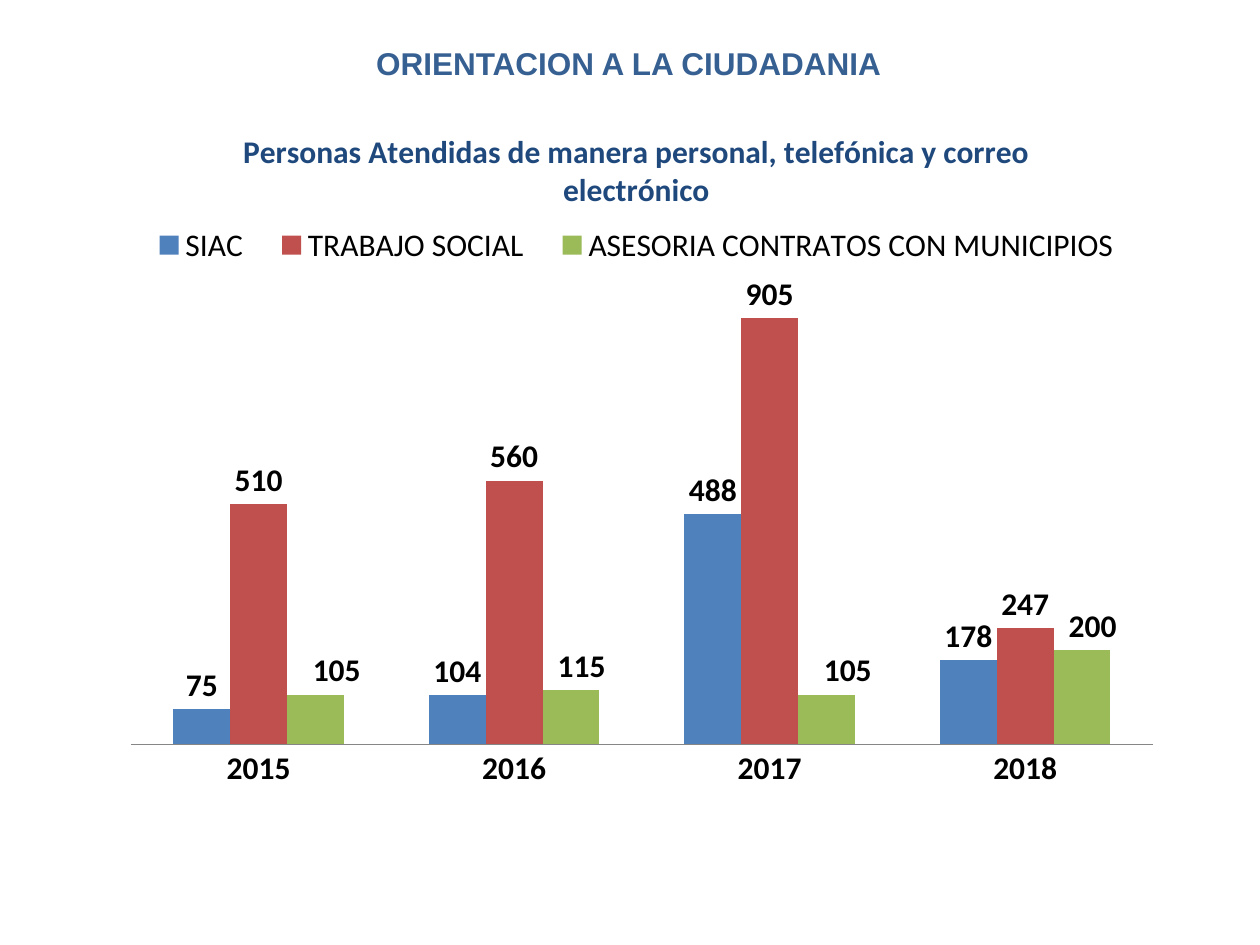
from dataclasses import dataclass

from lxml.etree import SubElement
from pptx import Presentation
from pptx.chart.data import CategoryChartData
from pptx.dml.color import RGBColor
from pptx.enum.chart import XL_CHART_TYPE, XL_LABEL_POSITION, XL_LEGEND_POSITION, XL_TICK_MARK
from pptx.enum.text import MSO_ANCHOR, PP_ALIGN
from pptx.oxml.ns import qn
from pptx.util import Inches, Pt


@dataclass(frozen=True)
class Theme:
    heading: RGBColor = RGBColor(0x37, 0x60, 0x92)
    chart_title: RGBColor = RGBColor(0x1F, 0x49, 0x7D)
    text: RGBColor = RGBColor(0, 0, 0)
    axis: RGBColor = RGBColor(0x86, 0x86, 0x86)
    series: tuple = (
        RGBColor(0x4F, 0x81, 0xBD),
        RGBColor(0xC0, 0x50, 0x4D),
        RGBColor(0x9B, 0xBB, 0x59),
    )
    heading_font: str = "Arial"
    chart_font: str = "Calibri"
    size: Pt = Pt(18)


THEME = Theme()
YEARS = ("2015", "2016", "2017", "2018")
ATTENDED = {
    "SIAC": (75, 104, 488, 178),
    "TRABAJO SOCIAL": (510, 560, 905, 247),
    "ASESORIA CONTRATOS CON MUNICIPIOS": (105, 115, 105, 200),
}
CONTRACT_LABEL_SHIFTS = (0.02, 0.01, 0.02, 0.01)


def format_font(font, color, bold=True, name=THEME.chart_font):
    font.name = name
    font.size = THEME.size
    font.bold = bold
    font.color.rgb = color


def add_manual_layout(parent, position, **settings):
    for old_layout in parent.findall(qn("c:layout")):
        parent.remove(old_layout)
    layout = SubElement(parent, qn("c:layout"))
    manual = SubElement(layout, qn("c:manualLayout"))
    for name, value in settings.items():
        SubElement(manual, qn(f"c:{name}")).set("val", str(value))
    parent.insert(position, layout)


def place_title(slide, left, top, width, height):
    title = slide.shapes.title
    title.left, title.top, title.width, title.height = left, top, width, height
    frame = title.text_frame
    frame.text = "ORIENTACION A LA CIUDADANIA"
    frame.vertical_anchor = MSO_ANCHOR.TOP
    paragraph = frame.paragraphs[0]
    paragraph.alignment = PP_ALIGN.CENTER
    format_font(paragraph.runs[0].font, THEME.heading, name=THEME.heading_font)


def format_chart_title(chart):
    chart.has_title = True
    frame = chart.chart_title.text_frame
    frame.text = "Personas Atendidas de manera personal, telefónica y correo electrónico"
    format_font(frame.paragraphs[0].runs[0].font, THEME.chart_title)
    add_manual_layout(
        chart.chart_title._element, 1, xMode="edge", yMode="edge", x=0.12, y=0.05
    )


def format_legend(chart):
    chart.has_legend = True
    legend = chart.legend
    legend.position = XL_LEGEND_POSITION.TOP
    legend.include_in_layout = False
    format_font(legend.font, THEME.text, bold=False)
    add_manual_layout(
        legend._element, 1, xMode="edge", yMode="edge", x=0.02, y=0.19, w=0.95, h=0.06
    )


def format_axes(chart):
    category_axis = chart.category_axis
    category_axis.major_tick_mark = XL_TICK_MARK.NONE
    category_axis.format.line.color.rgb = THEME.axis
    format_font(category_axis.tick_labels.font, THEME.text)
    value_axis = chart.value_axis
    value_axis.visible = False
    value_axis.has_major_gridlines = False
    value_axis.minimum_scale = 0
    value_axis.maximum_scale = 1000


def format_series(plot):
    for series, color in zip(plot.series, THEME.series):
        series.format.fill.solid()
        series.format.fill.fore_color.rgb = color
        labels = series.data_labels
        labels.show_value = True
        labels.position = XL_LABEL_POSITION.OUTSIDE_END
        format_font(labels.font, THEME.text)


def shift_labels(series, shifts):
    for index in range(len(shifts)):
        label = series.points[index].data_label
        label.position = XL_LABEL_POSITION.OUTSIDE_END
        format_font(label.font, THEME.text)
    labels = series.data_labels._element.findall(qn("c:dLbl"))
    for label, shift in zip(labels, shifts):
        add_manual_layout(label, 1, x=shift, y=0)


def place_chart(slide, left, top, width, height):
    data = CategoryChartData()
    data.categories = YEARS
    for name, values in ATTENDED.items():
        data.add_series(name, values)
    chart = slide.shapes.add_chart(
        XL_CHART_TYPE.COLUMN_CLUSTERED, left, top, width, height, data
    ).chart
    chart.font.name = THEME.chart_font
    format_chart_title(chart)
    format_legend(chart)
    format_axes(chart)
    plot = chart.plots[0]
    plot.gap_width = 150
    plot.overlap = 0
    plot.vary_by_categories = False
    format_series(plot)
    shift_labels(plot.series[-1], CONTRACT_LABEL_SHIFTS)
    plot_area = chart._chartSpace.find(f"{qn('c:chart')}/{qn('c:plotArea')}")
    add_manual_layout(
        plot_area, 0, layoutTarget="inner", xMode="edge", yMode="edge",
        x=0.02, y=0.26, w=0.96, h=0.66,
    )


def main():
    presentation = Presentation()
    presentation.slide_width = Inches(10)
    presentation.slide_height = Inches(7.5)
    slide = presentation.slides.add_slide(presentation.slide_layouts[5])
    place_title(slide, Inches(0.66), Inches(0.3), Inches(8.66), Inches(0.4))
    place_chart(slide, Inches(0.87), Inches(0.7), Inches(8.45), Inches(5.66))
    presentation.save("out.pptx")


if __name__ == "__main__":
    main()
